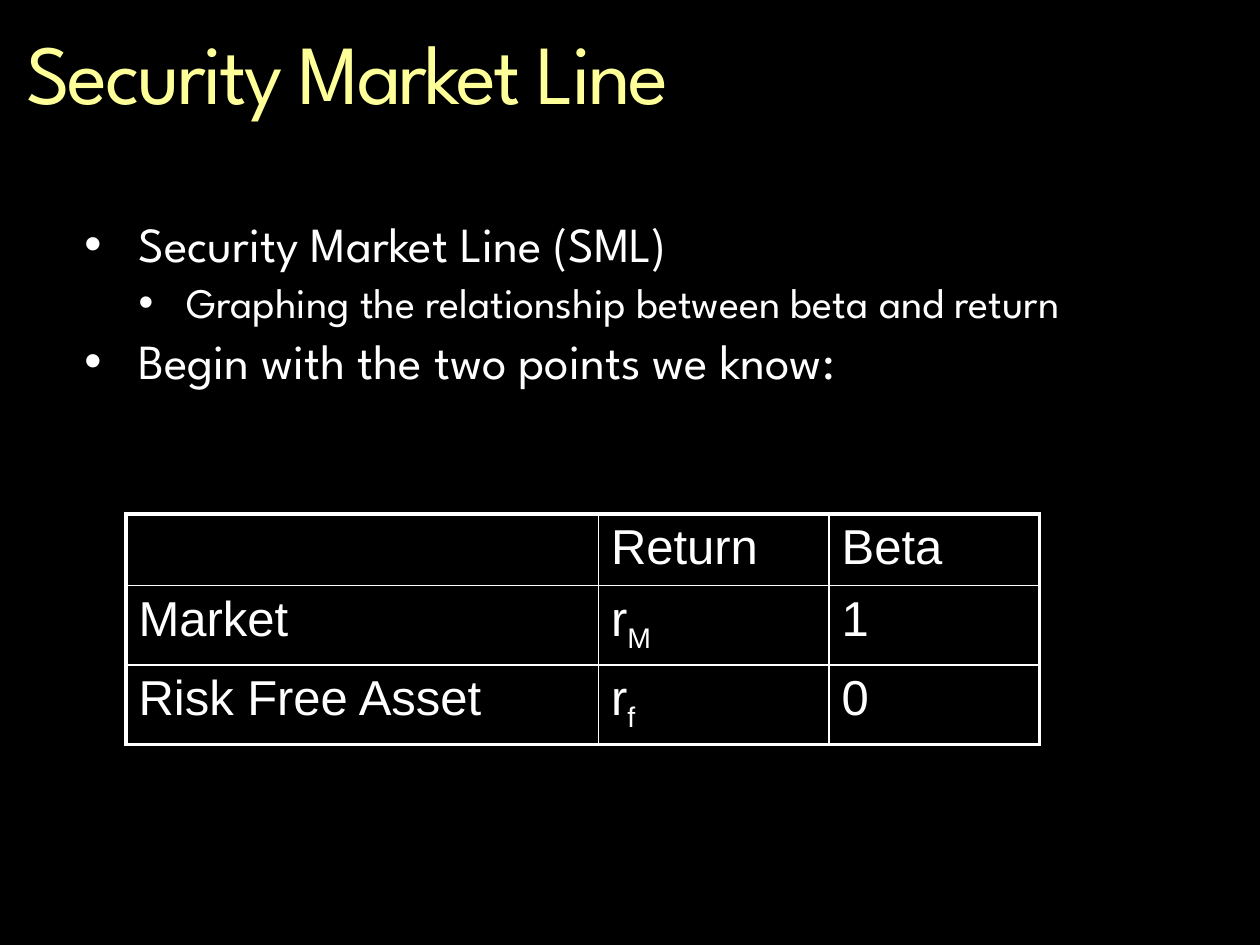
from dataclasses import dataclass

from lxml import etree
from pptx import Presentation
from pptx.dml.color import RGBColor
from pptx.enum.text import MSO_ANCHOR, PP_ALIGN
from pptx.oxml.ns import qn
from pptx.util import Inches, Pt

TOP = MSO_ANCHOR.TOP
LEFT = PP_ALIGN.LEFT


@dataclass(frozen=True)
class Theme:
    background: RGBColor = RGBColor(0x00, 0x00, 0x00)
    heading: RGBColor = RGBColor(0xFF, 0xFF, 0x99)
    ink: RGBColor = RGBColor(0xFF, 0xFF, 0xFF)
    text_face: str = "League Spartan"
    table_face: str = "Arial"
    heading_size: float = 48
    point_size: float = 28
    detail_size: float = 24
    table_size: float = 28
    line_spacing: float = 0.9
    gap_share: float = 0.2
    outer_border: float = 2.25
    inner_border: float = 1


THEME = Theme()
TITLE = "Security Market Line"
POINTS = [
    (0, "Security Market Line (SML)"),
    (1, "Graphing the relationship between beta and return"),
    (0, "Begin with the two points we know:"),
]
LEVELS = [(0.43, 0.43, THEME.point_size), (0.81, 0.38, THEME.detail_size)]
RETURNS = [
    [("",), ("Return",), ("Beta",)],
    [("Market",), ("r", "M"), ("1",)],
    [("Risk Free Asset",), ("r", "f"), ("0",)],
]
COLUMN_WIDTHS = [3.75, 1.83, 1.67]
ROW_HEIGHTS = [0.54, 0.59, 0.59]


def style(paragraph, face, size, color):
    paragraph.alignment = LEFT
    paragraph.font.name = face
    paragraph.font.size = Pt(size)
    paragraph.font.color.rgb = color


def clear_insets(frame):
    frame.margin_left = frame.margin_right = 0
    frame.margin_top = frame.margin_bottom = 0
    frame.vertical_anchor = TOP
    frame.word_wrap = True


def add_title(slide):
    title = slide.shapes.title
    title.left, title.top = Inches(0.21), Inches(0.25)
    title.width, title.height = Inches(8.77), Inches(1)
    clear_insets(title.text_frame)
    heading = title.text_frame.paragraphs[0]
    heading.line_spacing = THEME.line_spacing
    style(heading, THEME.text_face, THEME.heading_size, THEME.heading)
    run = heading.add_run()
    run.text = TITLE
    run._r.get_or_add_rPr().set("spc", "-150")


def add_bullet(paragraph, indent, hanging):
    properties = paragraph._p.get_or_add_pPr()
    properties.set("marL", str(Inches(indent)))
    properties.set("indent", str(-Inches(hanging)))
    etree.SubElement(properties, qn("a:buFont"), typeface="Arial")
    etree.SubElement(properties, qn("a:buChar"), char="•")


def add_points(slide):
    box = slide.shapes.add_textbox(Inches(0.67), Inches(1.75), Inches(8.5), Inches(1.75))
    frame = box.text_frame
    clear_insets(frame)
    for index, (level, text) in enumerate(POINTS):
        point = frame.add_paragraph() if index else frame.paragraphs[0]
        indent, hanging, size = LEVELS[level]
        point.text = text
        point.level = level
        point.line_spacing = THEME.line_spacing
        if index:
            point.space_before = Pt(size * THEME.gap_share)
        add_bullet(point, indent, hanging)
        style(point, THEME.text_face, size, THEME.ink)


def add_border(cell, side, width):
    line = etree.SubElement(cell._tc.get_or_add_tcPr(), qn(f"a:ln{side}"), w=str(Pt(width)))
    fill = etree.SubElement(line, qn("a:solidFill"))
    etree.SubElement(fill, qn("a:srgbClr"), val=str(THEME.ink))


def fill_cell(cell, parts):
    paragraph = cell.text_frame.paragraphs[0]
    style(paragraph, THEME.table_face, THEME.table_size, THEME.ink)
    for position, part in enumerate(filter(None, parts)):
        run = paragraph.add_run()
        run.text = part
        if position:
            run._r.get_or_add_rPr().set("baseline", "-25000")


def add_returns_table(slide):
    row_count, column_count = len(RETURNS), len(COLUMN_WIDTHS)
    table = slide.shapes.add_table(
        row_count, column_count, Inches(1), Inches(4.08),
        Inches(sum(COLUMN_WIDTHS)), Inches(sum(ROW_HEIGHTS)),
    ).table
    table.first_row = table.horz_banding = False
    for column, width in zip(table.columns, COLUMN_WIDTHS):
        column.width = Inches(width)
    for row, height in zip(table.rows, ROW_HEIGHTS):
        row.height = Inches(height)
    for r, entries in enumerate(RETURNS):
        for c, parts in enumerate(entries):
            cell = table.cell(r, c)
            edges = {"L": c == 0, "R": c == column_count - 1,
                     "T": r == 0, "B": r == row_count - 1}
            for side, outer in edges.items():
                add_border(cell, side, THEME.outer_border if outer else THEME.inner_border)
            cell.fill.background()
            fill_cell(cell, parts)


def main():
    presentation = Presentation()
    presentation.slide_width, presentation.slide_height = Inches(10), Inches(7.5)
    slide = presentation.slides.add_slide(presentation.slide_layouts[5])
    slide.background.fill.solid()
    slide.background.fill.fore_color.rgb = THEME.background
    add_title(slide)
    add_points(slide)
    add_returns_table(slide)
    presentation.save("out.pptx")


if __name__ == "__main__":
    main()
